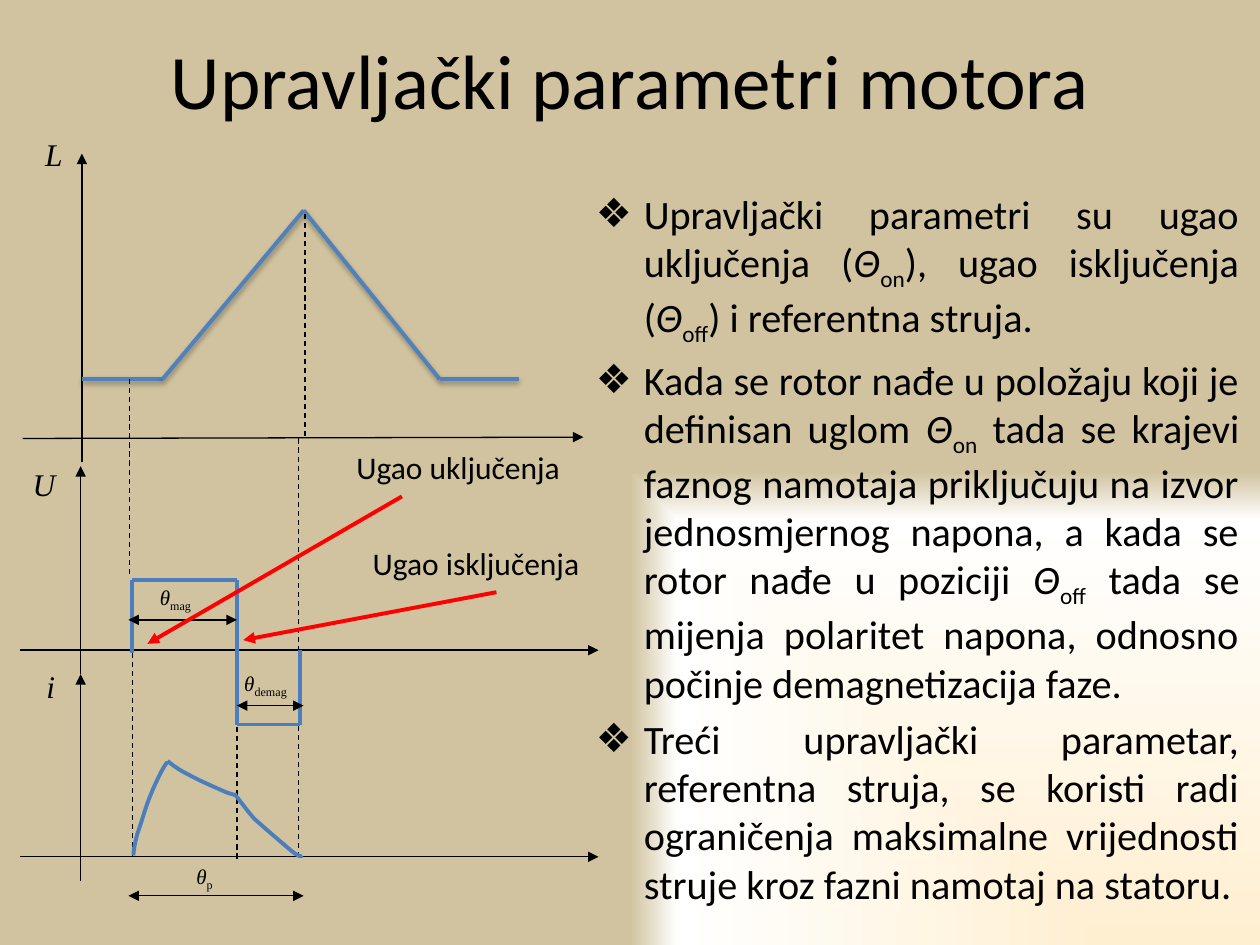
from itertools import pairwise

from pptx import Presentation
from pptx.dml.color import RGBColor
from pptx.enum.dml import MSO_LINE
from pptx.enum.shapes import MSO_CONNECTOR
from pptx.enum.text import MSO_ANCHOR, MSO_AUTO_SIZE, PP_ALIGN
from pptx.oxml import parse_xml
from pptx.oxml.ns import nsdecls, qn
from pptx.oxml.xmlchemy import OxmlElement
from pptx.util import Pt

PX = 9144  # 100 px to the inch
COLORS = {"text": "000000", "axis": "000000", "pulse": "4B7EBC", "inductance": "4F81BD",
          "callout": "FF0000", "cream": "FFEFD1", "white": "FFFFFF", "tan": "D1C39F"}
SANS, SERIF = "Calibri", "Times New Roman"
THETA_ON = [("Θ", "italic"), ("on", "sub")]
THETA_OFF = [("Θ", "italic"), ("off", "sub")]
BULLETS = [
    [("Upravljački parametri su ugao uključenja (", ""), *THETA_ON,
     ("), ugao isključenja (", ""), *THETA_OFF, (") i referentna struja.", "")],
    [("Kada se rotor nađe u položaju koji je definisan uglom ", ""), *THETA_ON,
     (" tada se krajevi faznog namotaja priključuju na izvor jednosmjernog napona, "
      "a kada se rotor nađe u poziciji ", ""), *THETA_OFF,
     (" tada se mijenja polaritet napona, odnosno počinje demagnetizacija faze.", "")],
    [("Treći upravljački parametar, referentna struja, se koristi radi ograničenja "
      "maksimalne vrijednosti struje kroz fazni namotaj na statoru.", "")],
]
SOFT_SHADOW = (f'<a:effectLst {nsdecls("a")}><a:outerShdw blurRad="40000" dist="23000" '
               'dir="5400000" rotWithShape="0"><a:srgbClr val="000000"><a:alpha val="35000"/>'
               '</a:srgbClr></a:outerShdw></a:effectLst>')
NO_EFFECT = f'<a:effectLst {nsdecls("a")}/>'


def place(shape, box):
    shape.left, shape.top, shape.width, shape.height = (value * PX for value in box)


def write_runs(paragraph, pieces, font, size):
    """Write (text, style) pieces, where style is "", "italic" or "sub"."""
    for text, style in pieces:
        run = paragraph.add_run()
        run.text = text
        run.font.name, run.font.size = font, Pt(size)
        run.font.color.rgb = RGBColor.from_string(COLORS["text"])
        run.font.italic = style == "italic"
        if style == "sub":
            run.font._element.set("baseline", "-25000")


class Panel:
    """Draws on a collection of shapes, relative to the corner of a box."""

    def __init__(self, shapes, box):
        self.shapes = shapes
        self.left, self.top = box[:2]

    def point(self, x, y):
        return (self.left + x) * PX, (self.top + y) * PX

    def line(self, start, end, color="axis", width=0.75, arrows="", dashed=False, effect=NO_EFFECT):
        """Draw a straight line; arrows is "", "end" or "both"."""
        connector = self.shapes.add_connector(
            MSO_CONNECTOR.STRAIGHT, *self.point(*start), *self.point(*end))
        connector.line.color.rgb = RGBColor.from_string(COLORS[color])
        connector.line.width = Pt(width)
        if dashed:
            connector.line.dash_style = MSO_LINE.DASH
        heads = {"": [], "end": ["a:tailEnd"], "both": ["a:headEnd", "a:tailEnd"]}[arrows]
        for tag in heads:
            head = OxmlElement(tag)
            head.set("type", "triangle")
            connector.line._get_or_add_ln().append(head)
        connector._element.spPr.append(parse_xml(effect))

    def polyline(self, points, color, effect=NO_EFFECT):
        for start, end in pairwise(points):
            self.line(start, end, color, 2.25, effect=effect)

    def curve(self, points, steps=8):
        """Draw joined cubic curves: a start, then three points for each curve."""
        outline = []
        for first in range(0, len(points) - 1, 3):
            corners = points[first:first + 4]
            for step in range(1, steps + 1):
                t = step / steps
                weights = ((1 - t) ** 3, 3 * t * (1 - t) ** 2, 3 * t * t * (1 - t), t ** 3)
                x, y = (sum(w * c[axis] for w, c in zip(weights, corners)) for axis in (0, 1))
                outline.append(tuple(round(value) for value in self.point(x, y)))
        builder = self.shapes.build_freeform(*self.point(*points[0]))
        builder.add_line_segments(outline, close=False)
        shape = builder.convert_to_shape()
        shape.shadow.inherit = False
        shape.fill.background()
        shape.line.color.rgb = RGBColor.from_string(COLORS["pulse"])
        shape.line.width = Pt(2.25)

    def label(self, box, pieces, font=SERIF, size=18):
        left, top, width, height = box
        text_box = self.shapes.add_textbox(*self.point(left, top), width * PX, height * PX)
        text_box.text_frame.word_wrap = True
        paragraph = text_box.text_frame.paragraphs[0]
        write_runs(paragraph, pieces, font, size)
        if font == SERIF:
            paragraph.line_spacing, paragraph.space_after = 1.05, Pt(8)

    def theta(self, box, index):
        self.label(box, [("θ", "italic"), (index, "sub")], size=12)


def group_panel(slide, box):
    return Panel(slide.shapes.add_group_shape().shapes, box)


def set_background(slide):
    stops = "".join(f'<a:gs pos="{position}000"><a:srgbClr val="{COLORS[name]}"/></a:gs>'
                    for position, name in ((0, "cream"), (90, "white"), (100, "tan")))
    slide.background.fill.gradient()
    gradient = slide._element.find(".//" + qn("a:gradFill"))
    gradient.getparent().replace(gradient, parse_xml(
        f'<a:gradFill {nsdecls("a")} rotWithShape="1"><a:gsLst>{stops}</a:gsLst>'
        '<a:path path="rect"><a:fillToRect l="100000" t="100000"/></a:path></a:gradFill>'))


def add_title(slide, box):
    title = slide.shapes.title
    place(title, box)
    title.text_frame.vertical_anchor = MSO_ANCHOR.MIDDLE
    paragraph = title.text_frame.paragraphs[0]
    paragraph.alignment = PP_ALIGN.CENTER
    write_runs(paragraph, [("Upravljački parametri motora", "")], SANS, 44)


def add_body(slide, box):
    body = slide.placeholders[1]
    place(body, box)
    frame = body.text_frame
    frame.auto_size = MSO_AUTO_SIZE.NONE
    for number, pieces in enumerate(BULLETS):
        paragraph = frame.add_paragraph() if number else frame.paragraphs[0]
        paragraph.alignment = PP_ALIGN.JUSTIFY
        write_runs(paragraph, pieces, SANS, 23)
        properties = paragraph._p.get_or_add_pPr()
        properties.set("marL", str(38 * PX))
        properties.set("indent", str(-38 * PX))
        bullet = OxmlElement("a:buChar")
        bullet.set("char", "❖")
        properties.append(bullet)


def add_voltage_chart(slide, box):
    panel = group_panel(slide, box)
    panel.line((0, 168), (459, 168), arrows="end")
    panel.line((48, 187), (48, 22), arrows="end")
    panel.label((0, 15, 42, 33), [("U", "italic")])
    panel.polyline([(89, 170), (89, 112), (172, 112), (172, 170), (172, 227), (222, 227),
                    (222, 168)], "pulse")
    panel.line((221, 0), (221, 168), dashed=True)
    panel.theta((101, 110, 64, 42), "mag")
    panel.line((86, 144), (172, 144), arrows="both")
    panel.theta((168, 178, 74, 42), "demag")
    panel.line((172, 212), (225, 212), arrows="both")


def add_current_chart(slide, box):
    panel = group_panel(slide, box)
    panel.line((0, 164), (459, 164), arrows="end")
    panel.line((48, 183), (48, 19), arrows="end")
    panel.label((11, 7, 41, 33), [("i", "italic")])
    for x, top, bottom in ((89, 2, 164), (172, 61, 166), (221, 60, 165)):
        panel.line((x, top), (x, bottom), dashed=True)
    panel.curve([(90, 163), (90, 159), (91, 154), (93, 146), (96, 138), (100, 123),
                 (104, 114), (108, 104), (115, 90), (117, 89)])
    panel.curve([(117, 88), (122, 92), (126, 95), (134, 99), (141, 103), (157, 110),
                 (164, 113), (170, 115), (171, 115), (172, 115)])
    panel.curve([(170, 114), (175, 120), (179, 126), (186, 134), (194, 141), (209, 154),
                 (215, 159), (221, 164), (223, 164), (224, 163)])
    panel.line((86, 195), (225, 195), arrows="both")
    panel.theta((130, 163, 75, 43), "p")


def add_inductance_chart(slide, box):
    panel = group_panel(slide, box)
    panel.line((2, 247), (447, 246), arrows="end")
    panel.line((49, 266), (49, 21), arrows="end")
    panel.label((10, 0, 107, 71), [("L", "italic")])
    panel.polyline([(49, 200), (113, 200), (225, 66), (333, 200), (396, 200)],
                   "inductance", SOFT_SHADOW)
    panel.line((87, 200), (87, 357), dashed=True)
    panel.line((226, 69), (226, 247), dashed=True)


def add_callouts(slide, box):
    panel = Panel(slide.shapes, box)
    for text, corner, start, end in (
            ("Ugao isključenja", (169, 76), (277, 119), (76, 157)),
            ("Ugao uključenja", (156, 0), (202, 43), (0, 160))):
        panel.line(start, end, "callout", 2.25, arrows="end")
        panel.label((*corner, 216, 40), [(text, "")], SANS)


def main():
    presentation = Presentation()
    presentation.slide_width, presentation.slide_height = 1000 * PX, 750 * PX
    slide = presentation.slides.add_slide(presentation.slide_layouts[1])
    set_background(slide)
    add_title(slide, (50, 0, 900, 125))
    add_body(slide, (463, 145, 531, 597))
    add_voltage_chart(slide, (16, 348, 459, 233))
    add_current_chart(slide, (16, 516, 459, 206))
    add_inductance_chart(slide, (16, 101, 447, 357))
    add_callouts(slide, (117, 351, 385, 160))
    presentation.save("out.pptx")


if __name__ == "__main__":
    main()
